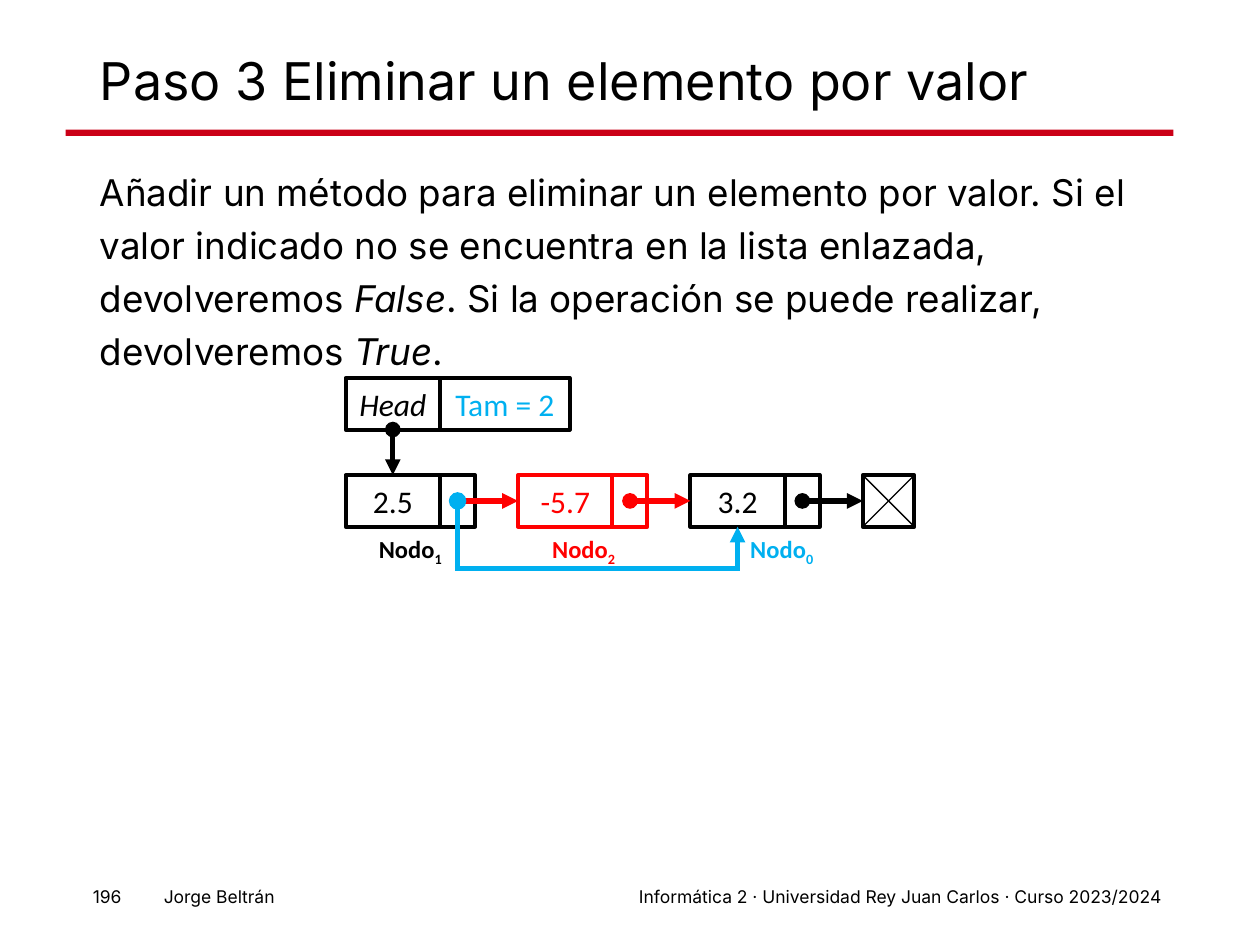
"""Build a slide on removing an element by value from a linked list."""
from lxml import etree
from pptx import Presentation
from pptx.dml.color import RGBColor
from pptx.enum.shapes import MSO_CONNECTOR, MSO_SHAPE
from pptx.enum.text import MSO_ANCHOR, PP_ALIGN
from pptx.oxml.ns import qn
from pptx.util import Pt

RECTANGLE, OVAL = MSO_SHAPE.RECTANGLE, MSO_SHAPE.OVAL
STRAIGHT = MSO_CONNECTOR.STRAIGHT
LEFT, CENTER, RIGHT = PP_ALIGN.LEFT, PP_ALIGN.CENTER, PP_ALIGN.RIGHT
TOP, MIDDLE = MSO_ANCHOR.TOP, MSO_ANCHOR.MIDDLE
COLORS = {name: RGBColor.from_string(value) for name, value in {
    "black": "000000", "red": "FF0000", "blue": "00B0F0", "rule": "CB0017",
}.items()}


def add_box(place, spans=(), size=18, font="Calibri", color="black", align=CENTER,
            anchor=MIDDLE, line=None, fill=None, kind=None):
    place = [Pt(value) for value in place]
    if kind is None:
        box = page.shapes.add_textbox(*place)
    else:
        box = page.shapes.add_shape(kind, *place)
        box.shadow.inherit = False
        if fill:
            box.fill.solid()
            box.fill.fore_color.rgb = COLORS[fill]
        else:
            box.fill.background()
        if line:
            box.line.color.rgb = COLORS[line]
            box.line.width = Pt(2.25)
        else:
            box.line.fill.background()
    box.text_frame.word_wrap = True
    box.text_frame.vertical_anchor = anchor
    para = box.text_frame.paragraphs[0]
    para.alignment = align
    for text, style in spans:
        span = para.add_run()
        span.text = text
        span.font.size = Pt(size)
        span.font.name = font
        span.font.color.rgb = COLORS[color]
        span.font.italic = "i" in style
        span.font.bold = "b" in style
        if "sub" in style:
            span.font._element.set("baseline", "-25000")
    return box


def add_line(start, end, color, width=3, head=None, tail=None):
    line = page.shapes.add_connector(STRAIGHT, *[Pt(value) for value in (*start, *end)])
    line.line.color.rgb = COLORS[color]
    line.line.width = Pt(width)
    outline = line.line._get_or_add_ln()
    for tag, arrow in (("a:headEnd", head), ("a:tailEnd", tail)):
        if arrow:
            etree.SubElement(outline, qn(tag)).set("type", arrow)
    etree.SubElement(line._element.spPr, qn("a:effectLst"))
    return line


deck = Presentation()
deck.slide_width, deck.slide_height = Pt(720), Pt(540)
page = deck.slides.add_slide(deck.slide_layouts[6])

add_box((37.5, 74, 633, 3.6), fill="rule", kind=RECTANGLE)
for place, text in (
    ((173, 502.5, 497.5, 19.5), "Informática 2 · Universidad Rey Juan Carlos · Curso 2023/2024"),
    ((15, 502.5, 149, 19.5), "Jorge Beltrán"),
    ((41.5, 502.5, 35, 19.5), "196"),
):
    add_box(place, [(text, "")], 10, "Inter", align=RIGHT, anchor=TOP)

title = add_box((50, 29, 620.5, 37.5), [("Paso 3 Eliminar un elemento por valor", "")],
                29.7, "Inter", align=LEFT)
title.text_frame.paragraphs[0].line_spacing = 0.9

body = add_box((50, 88.5, 620.5, 397.5), [
    ("Añadir un método para eliminar un elemento por valor. Si el valor indicado no se "
     "encuentra en la lista enlazada, devolveremos ", ""),
    ("False", "i"),
    (". Si la operación se puede realizar, devolveremos ", ""),
    ("True", "i"),
    (".", ""),
], 21, "Inter", align=LEFT, anchor=TOP)
body.text_frame.paragraphs[0].line_spacing = 1.2
body.text_frame.paragraphs[0].space_before = Pt(7.5)

first_left, node_step = 197.5, 98.5
value_width, pointer_width, cell_height = 54, 20, 29.5
head_top, node_top = 216, 271.5
node_middle = node_top + cell_height / 2
node_bottom = node_top + cell_height

head_box = add_box((first_left, head_top, value_width, cell_height), [("Head", "i")],
                   line="black", kind=RECTANGLE)
add_box((first_left + value_width, head_top, 74, cell_height), [("Tam = 2", "")],
        color="blue", line="black", kind=RECTANGLE)

targets = []
nodes = (("2.5", "black"), ("-5.7", "red"), ("3.2", "black"))
for index, (value, color) in enumerate(nodes):
    left = first_left + index * node_step
    targets.append(add_box((left, node_top, value_width, cell_height), [(value, "")],
                           color=color, line=color, kind=RECTANGLE))
    add_box((left + value_width, node_top, pointer_width, cell_height),
            line=color, kind=RECTANGLE)

null_left = first_left + len(nodes) * node_step
null_right = null_left + cell_height
targets.append(add_box((null_left, node_top, cell_height, cell_height),
                       line="black", kind=RECTANGLE))
add_line((null_left, node_top), (null_right, node_bottom), "black", 0.75)
add_line((null_left, node_bottom), (null_right, node_top), "black", 0.75)

head_link = add_line((0, 0), (0, 0), "black", head="oval", tail="triangle")
head_link.begin_connect(head_box, 2)
head_link.end_connect(targets[0], 0)
pointer_offset = value_width + pointer_width / 2
for index, color in enumerate(("red", "red", "black")):
    left = first_left + index * node_step
    link = add_line((left + pointer_offset, node_middle), (left + node_step, node_middle),
                    color, head="oval", tail="triangle")
    link.end_connect(targets[index + 1], 1)

for left, width, number, color in (
    (197.5, 74, "1", "black"), (296.5, 74, "2", "red"), (420.5, 52.5, "0", "blue"),
):
    add_box((left, 301.5, width, 24), [("Nodo", "b"), (number, "b sub")], 14,
            color=color, anchor=TOP)

bypass_left = first_left + pointer_offset
bypass_right = first_left + 2 * node_step + value_width / 2
bypass_bottom = 325
add_line((bypass_left, node_middle), (bypass_left, bypass_bottom), "blue")
add_line((bypass_left - 1.5, bypass_bottom), (bypass_right + 1.5, bypass_bottom), "blue")
bypass_arrow = add_line((bypass_right, bypass_bottom), (bypass_right, node_bottom),
                        "blue", tail="triangle")
bypass_arrow.end_connect(targets[2], 2)
bypass_dot = add_box((bypass_left - 4.5, node_middle - 4.5, 9, 9),
                     line="blue", fill="blue", kind=OVAL)
bypass_dot.line.width = Pt(1)

deck.save("out.pptx")
